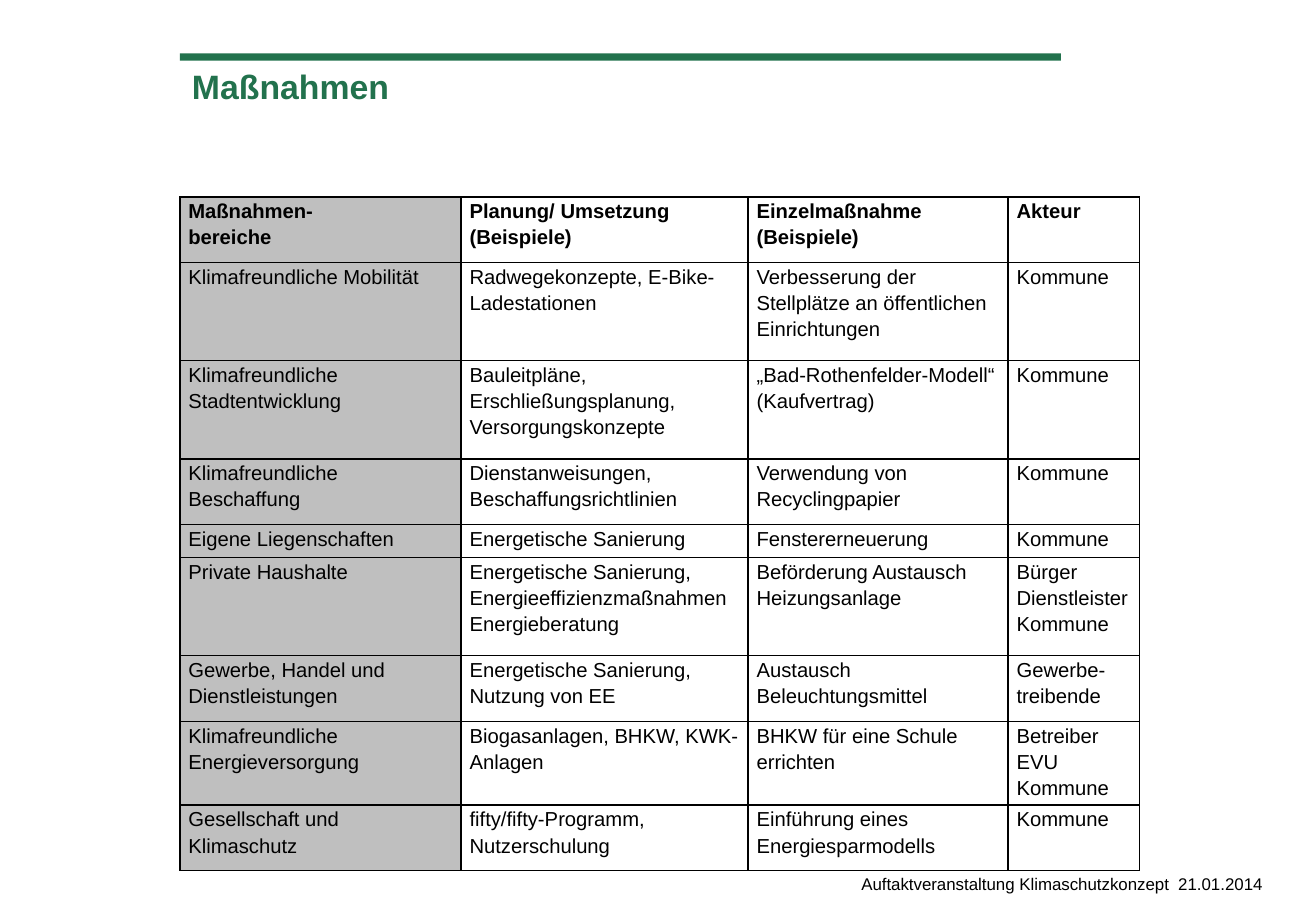
from lxml import etree
from pptx import Presentation
from pptx.dml.color import RGBColor
from pptx.enum.shapes import MSO_SHAPE
from pptx.enum.text import MSO_ANCHOR, MSO_AUTO_SIZE, PP_ALIGN
from pptx.oxml.ns import qn
from pptx.util import Inches, Pt

RECT = MSO_SHAPE.RECTANGLE
TOP = MSO_ANCHOR.TOP
LEFT = PP_ALIGN.LEFT
NO_FIT = MSO_AUTO_SIZE.NONE

GREEN = RGBColor(0x22, 0x72, 0x4D)
GREY = RGBColor(0xBF, 0xBF, 0xBF)
WHITE = RGBColor(0xFF, 0xFF, 0xFF)
BLACK = RGBColor(0, 0, 0)

MARGIN = 1.48
ROW_UNIT = 0.27
ROW_SPANS = [2, 3, 3, 2, 1, 3, 2, 2, 2]
COL_SHARES = [0.293, 0.299, 0.271, 0.137]

MEASURES = [
    ["Maßnahmen-\nbereiche", "Planung/ Umsetzung\n(Beispiele)",
     "Einzelmaßnahme\n(Beispiele)", "Akteur"],
    ["Klimafreundliche Mobilität", "Radwegekonzepte, E-Bike-Ladestationen",
     "Verbesserung der Stellplätze an öffentlichen Einrichtungen", "Kommune"],
    ["Klimafreundliche Stadtentwicklung",
     "Bauleitpläne, Erschließungsplanung, Versorgungskonzepte",
     "„Bad-Rothenfelder-Modell“ (Kaufvertrag)", "Kommune"],
    ["Klimafreundliche Beschaffung", "Dienstanweisungen, Beschaffungsrichtlinien",
     "Verwendung von Recyclingpapier", "Kommune"],
    ["Eigene Liegenschaften", "Energetische Sanierung", "Fenstererneuerung", "Kommune"],
    ["Private Haushalte",
     "Energetische Sanierung, Energieeffizienzmaßnahmen\nEnergieberatung",
     "Beförderung Austausch Heizungsanlage", "Bürger\nDienstleister\nKommune"],
    ["Gewerbe, Handel und Dienstleistungen", "Energetische Sanierung, Nutzung von EE",
     "Austausch Beleuchtungsmittel", "Gewerbe-treibende"],
    ["Klimafreundliche Energieversorgung", "Biogasanlagen, BHKW, KWK-Anlagen",
     "BHKW für eine Schule errichten", "Betreiber\nEVU Kommune"],
    ["Gesellschaft und Klimaschutz", "fifty/fifty-Programm, Nutzerschulung",
     "Einführung eines Energiesparmodells", "Kommune"],
]


def write(tf, text, size=12, color=BLACK, bold=False, spacing=1.0):
    """Fill a text frame with one formatted paragraph per line."""
    tf.word_wrap = True
    for i, line in enumerate(text.split("\n")):
        p = tf.add_paragraph() if i else tf.paragraphs[0]
        p.alignment = LEFT
        p.line_spacing = spacing
        p.space_before = p.space_after = Pt(0)
        r = p.add_run()
        r.text = line
        r.font.name = "Arial"
        r.font.size = Pt(size)
        r.font.bold = bold
        r.font.color.rgb = color


def border(cell, color=BLACK, width=1):
    """Draw a solid line on all four sides of a cell."""
    tcPr = cell._tc.get_or_add_tcPr()
    for side in ("a:lnL", "a:lnR", "a:lnT", "a:lnB"):
        ln = etree.SubElement(tcPr, qn(side), w=str(Pt(width)))
        fill = etree.SubElement(ln, qn("a:solidFill"))
        etree.SubElement(fill, qn("a:srgbClr"), val=str(color))


def add_rule(slide, box):
    """Place the green bar above the title."""
    sp = slide.shapes.add_shape(RECT, *map(Inches, box))
    sp.shadow.inherit = False
    sp.fill.solid()
    sp.fill.fore_color.rgb = GREEN
    sp.line.fill.background()


def add_title(slide, box, text):
    """Move the title placeholder into the box and write it."""
    sp = slide.shapes.title
    sp.left, sp.top, sp.width, sp.height = map(Inches, box)
    tf = sp.text_frame
    tf.auto_size = NO_FIT
    tf.vertical_anchor = TOP
    write(tf, text, size=20, color=GREEN, bold=True)


def add_footer(slide, box, text):
    """Write the event line at the foot of the slide."""
    sp = slide.shapes.add_textbox(*map(Inches, box))
    write(sp.text_frame, text, size=10)


def add_measures(slide, box, rows):
    """Build the table of measures with a grey first column."""
    table = slide.shapes.add_table(len(rows), len(COL_SHARES), *map(Inches, box)).table
    table.first_row = table.horz_banding = False
    for col, share in zip(table.columns, COL_SHARES):
        col.width = Inches(box[2] * share)
    for row, span in zip(table.rows, ROW_SPANS):
        row.height = Inches(box[3] * span / sum(ROW_SPANS))
    for i, texts in enumerate(rows):
        for j, text in enumerate(texts):
            cell = table.cell(i, j)
            cell.margin_left = cell.margin_right = Inches(0.07)
            cell.margin_top = cell.margin_bottom = 0
            border(cell)
            cell.fill.solid()
            cell.fill.fore_color.rgb = WHITE if j else GREY
            write(cell.text_frame, text, bold=i == 0, spacing=1.15)


def main():
    """Build and save the slide."""
    prs = Presentation()
    prs.slide_width, prs.slide_height = Inches(10.83), Inches(7.5)
    slide = prs.slides.add_slide(prs.slide_layouts[5])
    add_rule(slide, (MARGIN, 0.44, 7.25, 0.06))
    add_footer(slide, (6.99, 7.14, 3.84, 0.31),
               "Auftaktveranstaltung Klimaschutzkonzept  21.01.2014")
    add_title(slide, (MARGIN, 0.49, 7.16, 0.93), "Maßnahmen")
    add_measures(slide, (MARGIN, 1.62, 7.9, ROW_UNIT * sum(ROW_SPANS)), MEASURES)
    prs.save("out.pptx")


if __name__ == "__main__":
    main()
